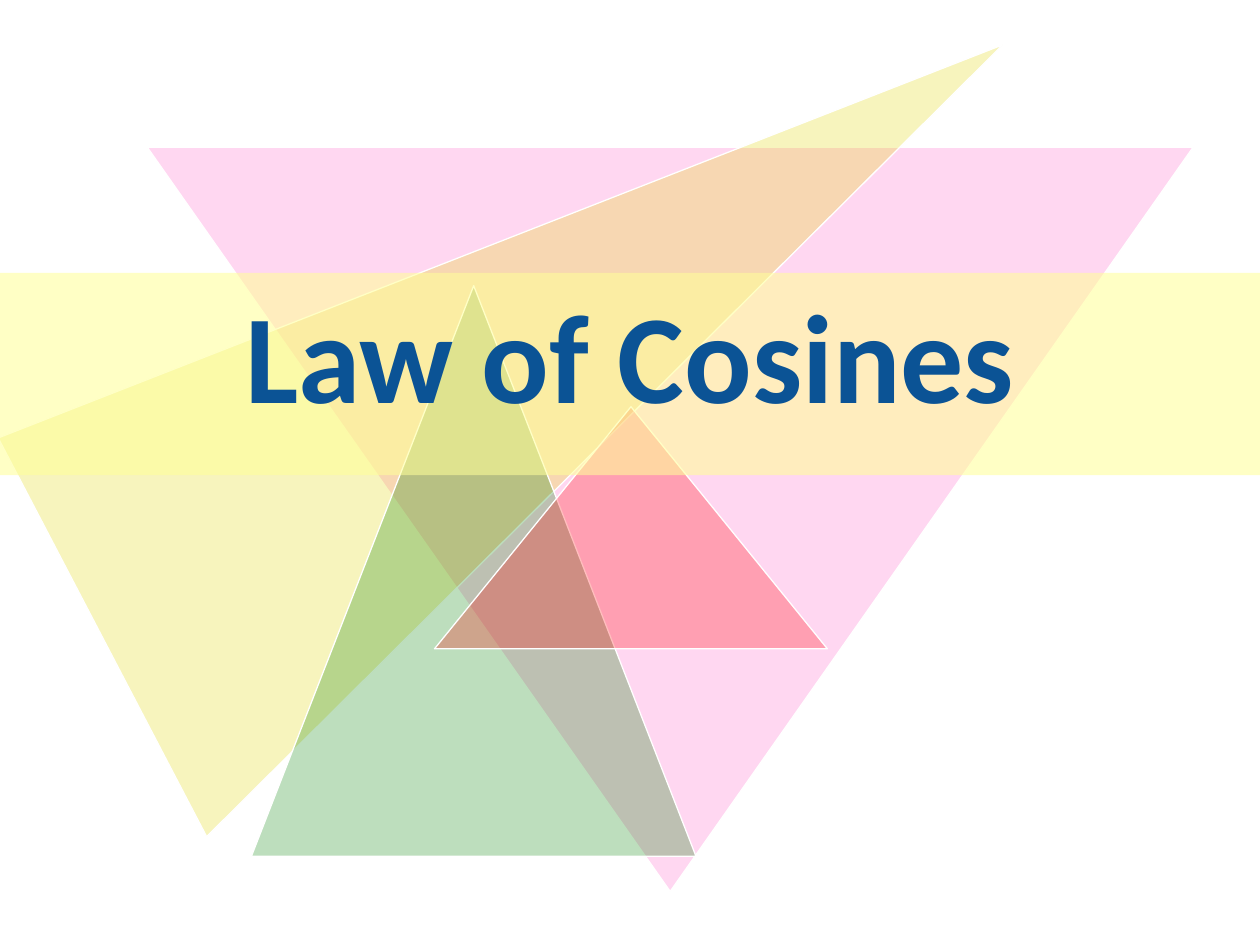
from lxml import etree
from pptx import Presentation
from pptx.dml.color import RGBColor
from pptx.enum.shapes import MSO_SHAPE
from pptx.enum.text import MSO_ANCHOR, PP_ALIGN
from pptx.oxml.ns import qn
from pptx.util import Cm, Pt

COLORS = {
    "pink": "FF66CC",
    "yellow": "E2D700",
    "green": "008000",
    "red": "FF0000",
    "band": "FFFF99",
    "white": "FFFFFF",
    "title": "0B5395",
}


def add_filled(kind, left, top, width, height, color, opacity):
    s = slide.shapes.add_shape(kind, Cm(left), Cm(top), Cm(width), Cm(height))
    s.shadow.inherit = False
    s.fill.solid()
    s.fill.fore_color.rgb = RGBColor.from_string(COLORS[color])
    clr = s.fill._xPr.find(qn("a:solidFill"))[0]
    etree.SubElement(clr, qn("a:alpha")).set("val", str(opacity * 1000))
    return s


def add_text(s, text, size, color, font="Calibri", bold=False, bottom=0.13,
             align=PP_ALIGN.CENTER, anchor=MSO_ANCHOR.MIDDLE):
    tf = s.text_frame
    tf.word_wrap = True
    tf.vertical_anchor = anchor
    tf.margin_top, tf.margin_bottom = Cm(0), Cm(bottom)
    p = tf.paragraphs[0]
    p.alignment = align
    r = p.add_run()
    r.text = text
    r.font.size = Pt(size)
    r.font.name = font
    r.font.bold = bold
    r.font.color.rgb = RGBColor.from_string(COLORS[color])


prs = Presentation()
prs.slide_width, prs.slide_height = Cm(25.4), Cm(19.05)
slide = prs.slides.add_slide(prs.slide_layouts[6])

# Overlapping triangles: left, top, width, height, rotation, apex position, colour
triangles = [
    (2.97, 2.97, 21.08, 15.0, 180, 0.5, "pink"),
    (7.11, -2.97, 9.07, 21.62, 62.4, 0.26, "yellow"),
    (5.07, 5.76, 8.96, 11.5, 0, 0.5, "green"),
    (8.76, 8.2, 7.92, 4.88, 0, 0.5, "red"),
]
for left, top, width, height, rotation, apex, color in triangles:
    s = add_filled(MSO_SHAPE.ISOSCELES_TRIANGLE, left, top, width, height, color, 26)
    s.adjustments[0] = apex
    s.rotation = rotation
    s.line.color.rgb = RGBColor.from_string(COLORS["white"])
    s.line.width = Pt(0.75)

# Title band across the slide, with the title a little above its middle
band = add_filled(MSO_SHAPE.RECTANGLE, 0, 5.5, 25.4, 4.08, "band", 57)
band.line.fill.background()
add_text(band, "Law of Cosines", size=72, color="title", bold=True, bottom=0.83)

prs.save("out.pptx")
